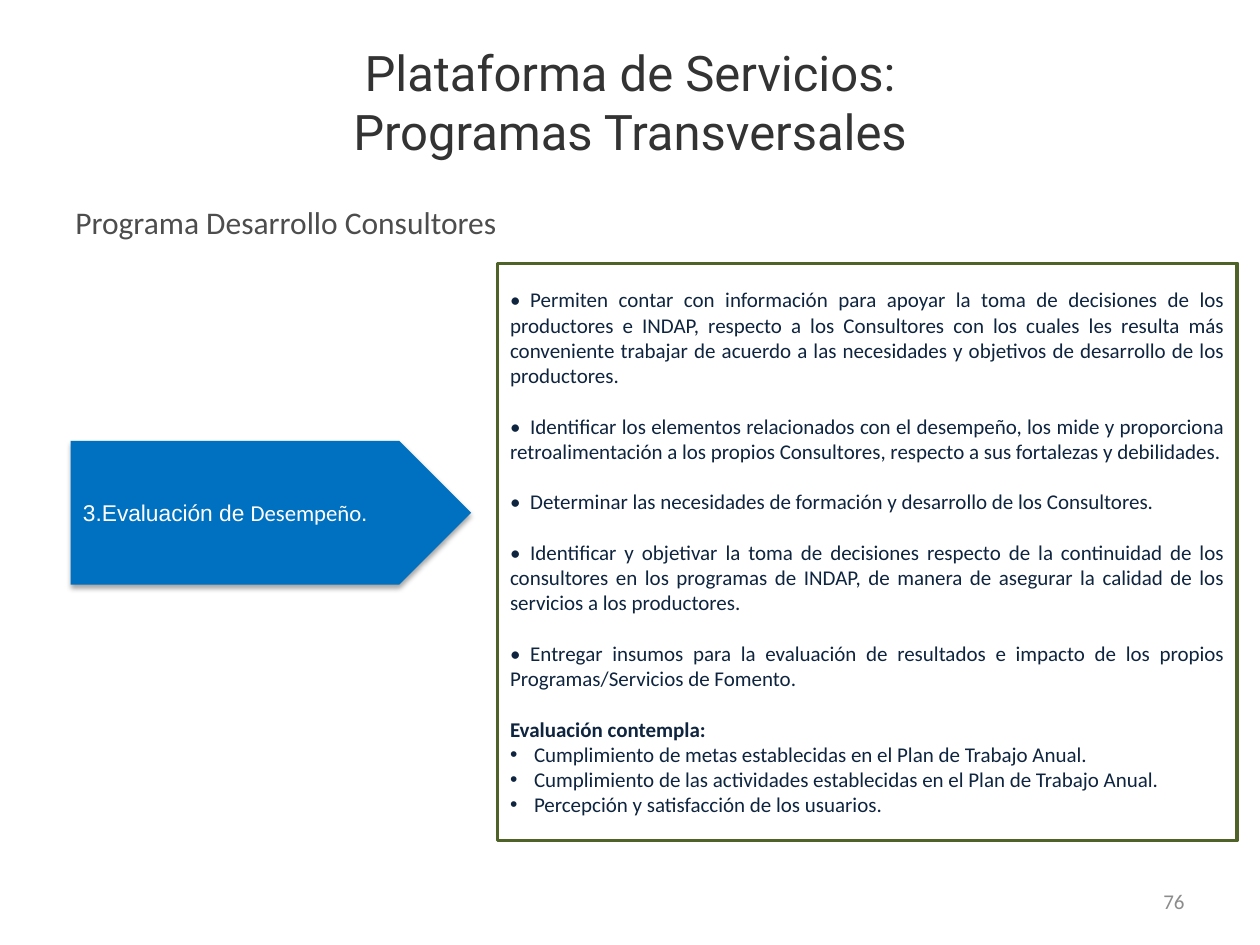
"""Build the slide on consultant performance evaluation."""
from dataclasses import dataclass

from lxml.etree import SubElement
from pptx import Presentation
from pptx.dml.color import RGBColor
from pptx.enum.shapes import MSO_SHAPE as Shp
from pptx.enum.text import MSO_ANCHOR as Anchor, MSO_AUTO_SIZE as Auto, PP_ALIGN as Align
from pptx.oxml.ns import qn
from pptx.util import Inches, Pt

COLORS = {
    "title": "333333",
    "subtitle": "4D4D4D",
    "body": "0F243E",
    "border": "4F6228",
    "arrow": "0070C0",
    "white": "FFFFFF",
    "number": "8C8C8C",
    "shadow": "000000",
}


@dataclass
class Style:
    """Font settings of a run."""
    size: float
    color: str
    font: str = "Calibri"
    bold: bool = False


@dataclass
class Item:
    """Paragraph of the details box."""
    text: str
    kind: str = "point"


ITEMS = [
    Item("Permiten contar con información para apoyar la toma de decisiones de los "
         "productores e INDAP, respecto a los Consultores con los cuales les resulta más "
         "conveniente trabajar de acuerdo a las necesidades y objetivos de desarrollo de los "
         "productores."),
    Item("Identificar los elementos relacionados con el desempeño, los mide y proporciona "
         "retroalimentación a los propios Consultores, respecto a sus fortalezas y debilidades."),
    Item("Determinar las necesidades de formación y desarrollo de los Consultores."),
    Item("Identificar y objetivar la toma de decisiones respecto de la continuidad de los "
         "consultores en los programas de INDAP, de manera de asegurar la calidad de los "
         "servicios a los productores."),
    Item("Entregar insumos para la evaluación de resultados e impacto de los propios "
         "Programas/Servicios de Fomento."),
    Item("Evaluación contempla:", "heading"),
    Item("Cumplimiento de metas establecidas en el Plan de Trabajo Anual.", "bullet"),
    Item("Cumplimiento de las actividades establecidas en el Plan de Trabajo Anual.", "bullet"),
    Item("Percepción y satisfacción de los usuarios.", "bullet"),
]


def rgb(name: str) -> RGBColor:
    """Look up a colour by name."""
    return RGBColor.from_string(COLORS[name])


def box(*lengths: float) -> list:
    """Turn left, top, width and height into lengths."""
    return [Inches(v) for v in lengths]


def add_run(p, text: str, style: Style) -> None:
    """Add one formatted run."""
    r = p.add_run()
    r.text = text
    r.font.name, r.font.size, r.font.bold = style.font, Pt(style.size), style.bold
    r.font.color.rgb = rgb(style.color)


def add_label(slide, place: list, text: str, style: Style, align=Align.LEFT,
              anchor=Anchor.TOP) -> None:
    """Add a one-line text box."""
    tf = slide.shapes.add_textbox(*place).text_frame
    tf.word_wrap, tf.vertical_anchor = True, anchor
    p = tf.paragraphs[0]
    p.alignment = align
    add_run(p, text, style)


def set_title(sp, place: list, lines: list[str]) -> None:
    """Place and fill the title."""
    sp.left, sp.top, sp.width, sp.height = place
    tf = sp.text_frame
    tf.auto_size, tf.vertical_anchor = Auto.NONE, Anchor.MIDDLE
    for i, line in enumerate(lines):
        p = tf.add_paragraph() if i else tf.paragraphs[0]
        p.alignment = Align.CENTER
        add_run(p, line, Style(28, "title", "Roboto"))


def add_details(slide, place: list, items: list[Item]) -> None:
    """Draw the bordered box with its paragraphs."""
    sp = slide.shapes.add_shape(Shp.RECTANGLE, *place)
    sp.shadow.inherit = False
    sp.fill.background()
    sp.line.color.rgb, sp.line.width = rgb("border"), Pt(2)
    tf = sp.text_frame
    tf.word_wrap, tf.vertical_anchor = True, Anchor.MIDDLE
    for i, item in enumerate(items):
        p = tf.add_paragraph() if i else tf.paragraphs[0]
        p.alignment = Align.JUSTIFY
        pPr = p._p.get_or_add_pPr()
        if i and item.kind != "bullet":
            p.space_before = Pt(14.5)
        if item.kind == "bullet":
            indent = Inches(0.19)
            pPr.set("marL", str(indent))
            pPr.set("indent", str(-indent))
            SubElement(pPr, qn("a:buFont"), typeface="Arial")
            SubElement(pPr, qn("a:buChar"), char="•")
        elif item.kind == "point":
            tabs = SubElement(pPr, qn("a:tabLst"))
            SubElement(tabs, qn("a:tab"), pos=str(Inches(0.16)), algn="l")
        text = f"•\t{item.text}" if item.kind == "point" else item.text
        add_run(p, text, Style(12, "body", bold=item.kind == "heading"))


def add_arrow(slide, place: list, runs: list[tuple[str, str]]) -> None:
    """Draw the pentagon arrow with a soft shadow."""
    sp = slide.shapes.add_shape(Shp.PENTAGON, *place)
    sp.fill.solid()
    sp.fill.fore_color.rgb = rgb("arrow")
    sp.line.fill.background()
    sp.shadow.inherit = False
    effects = sp._element.spPr.find(qn("a:effectLst"))
    shadow = SubElement(effects, qn("a:outerShdw"), blurRad=str(Pt(3.1)), dist=str(Pt(1.8)),
                        dir="5400000", rotWithShape="0")
    color = SubElement(shadow, qn("a:srgbClr"), val=COLORS["shadow"])
    SubElement(color, qn("a:alpha"), val="35000")
    tf = sp.text_frame
    tf.word_wrap, tf.vertical_anchor = True, Anchor.MIDDLE
    p = tf.paragraphs[0]
    p.alignment = Align.LEFT
    for text, font in runs:
        add_run(p, text, Style(13, "white", font))


def main() -> None:
    """Build and save the presentation."""
    prs = Presentation()
    prs.slide_width, prs.slide_height = Inches(10), Inches(7.5)
    s = prs.slides.add_slide(prs.slide_layouts[5])
    set_title(s.shapes.title, box(0.5, 0.18, 9, 1.25),
              ["Plataforma de Servicios:", "Programas Transversales"])
    add_label(s, box(0.5, 1.56, 9, 0.45), "Programa Desarrollo Consultores",
              Style(18, "subtitle"))
    add_details(s, box(3.95, 2.09, 5.87, 4.58), ITEMS)
    add_arrow(s, box(0.56, 3.5, 3.18, 1.14),
              [("3.Evaluación de ", "Arial"), ("Desempeño", "Calibri"), (".", "Arial")])
    add_label(s, box(7.17, 6.95, 2.33, 0.4), "76", Style(12, "number"),
              Align.RIGHT, Anchor.MIDDLE)
    prs.save("out.pptx")


if __name__ == "__main__":
    main()
